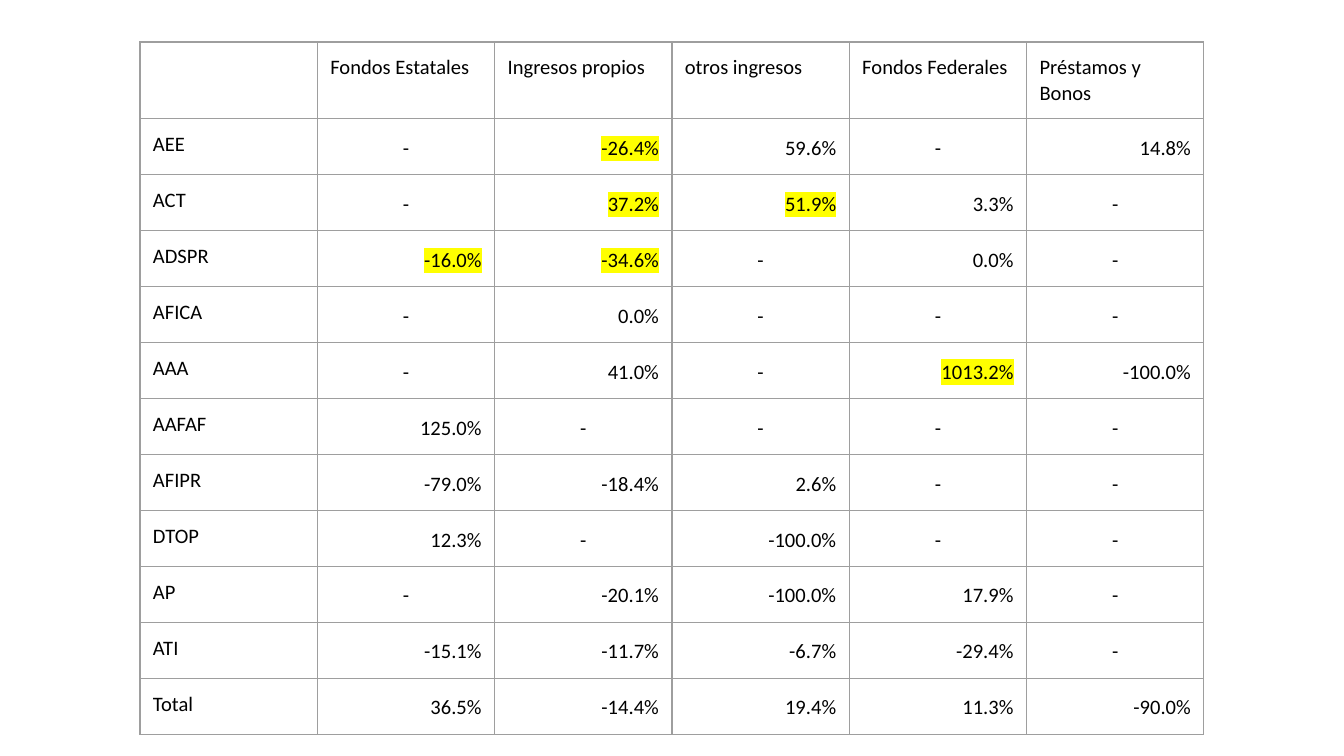
from dataclasses import dataclass

from lxml import etree
from pptx import Presentation
from pptx.dml.color import RGBColor
from pptx.enum.text import MSO_ANCHOR, PP_ALIGN
from pptx.oxml.ns import qn
from pptx.util import Pt

LEFT, CENTER, RIGHT = PP_ALIGN.LEFT, PP_ALIGN.CENTER, PP_ALIGN.RIGHT
TOP = MSO_ANCHOR.TOP
BLANK_LAYOUT = 6
PX_PER_INCH = 134.4
FONT = "Calibri"
COLORS = {"text": "000000", "border": "9E9E9E", "highlight": "FFFF00"}

PAGE_WIDTH, PAGE_HEIGHT = 1344, 756
TABLE_LEFT, TABLE_TOP, TABLE_WIDTH = 140, 42, 1064
ROW_HEIGHT = 56
CELL_INSET = 13


@dataclass(frozen=True)
class AgencyRow:
    agency: str
    changes: tuple[str, ...]
    highlighted: tuple[int, ...] = ()


HEADERS = (
    "", "Fondos Estatales", "Ingresos propios", "otros ingresos",
    "Fondos Federales", "Préstamos y Bonos",
)
AGENCIES = (
    AgencyRow("AEE", ("-", "-26.4%", "59.6%", "-", "14.8%"), (2,)),
    AgencyRow("ACT", ("-", "37.2%", "51.9%", "3.3%", "-"), (2, 3)),
    AgencyRow("ADSPR", ("-16.0%", "-34.6%", "-", "0.0%", "-"), (1, 2)),
    AgencyRow("AFICA", ("-", "0.0%", "-", "-", "-")),
    AgencyRow("AAA", ("-", "41.0%", "-", "1013.2%", "-100.0%"), (4,)),
    AgencyRow("AAFAF", ("125.0%", "-", "-", "-", "-")),
    AgencyRow("AFIPR", ("-79.0%", "-18.4%", "2.6%", "-", "-")),
    AgencyRow("DTOP", ("12.3%", "-", "-100.0%", "-", "-")),
    AgencyRow("AP", ("-", "-20.1%", "-100.0%", "17.9%", "-")),
    AgencyRow("ATI", ("-15.1%", "-11.7%", "-6.7%", "-29.4%", "-")),
    AgencyRow("Total", ("36.5%", "-14.4%", "19.4%", "11.3%", "-90.0%")),
)


def px(length: float) -> int:
    return round(length * 914400 / PX_PER_INCH)


def add_color(parent, tag: str, color: str):
    element = etree.SubElement(parent, qn(tag))
    etree.SubElement(element, qn("a:srgbClr"), val=COLORS[color])
    return element


def style_cell(cell) -> None:
    cell.fill.background()
    cell.vertical_anchor = TOP
    cell.margin_left = cell.margin_right = px(CELL_INSET)
    cell.margin_top = cell.margin_bottom = px(CELL_INSET)
    properties = cell._tc.get_or_add_tcPr()
    for position, side in enumerate(("a:lnL", "a:lnR", "a:lnT", "a:lnB")):
        line = etree.Element(qn(side), w=str(Pt(0.75)))
        add_color(line, "a:solidFill", "border")
        properties.insert(position, line)


def write_cell(cell, text: str, is_value: bool = False, highlighted: bool = False) -> None:
    style_cell(cell)
    if not text:
        return
    para = cell.text_frame.paragraphs[0]
    para.alignment = LEFT
    if is_value:
        para.alignment = CENTER if text == "-" else RIGHT
        para.line_spacing = 1.15
    span = para.add_run()
    span.text = text
    span.font.size = Pt(11)
    span.font.name = FONT
    span.font.color.rgb = RGBColor.from_string(COLORS["text"])
    if highlighted:
        properties = span.font._element
        marker = add_color(properties, "a:highlight", "highlight")
        properties.find(qn("a:solidFill")).addnext(marker)


def add_funds_table(page) -> None:
    row_count, column_count = len(AGENCIES) + 1, len(HEADERS)
    table = page.shapes.add_table(
        row_count, column_count, px(TABLE_LEFT), px(TABLE_TOP),
        px(TABLE_WIDTH), px(ROW_HEIGHT * row_count),
    ).table
    table.first_row = False
    table.horz_banding = False
    for column in table.columns:
        column.width = px(TABLE_WIDTH / column_count)
    for row in table.rows:
        row.height = px(ROW_HEIGHT)
    for column, header in enumerate(HEADERS):
        write_cell(table.cell(0, column), header)
    for row, agency in enumerate(AGENCIES, start=1):
        write_cell(table.cell(row, 0), agency.agency)
        for column, change in enumerate(agency.changes, start=1):
            write_cell(table.cell(row, column), change, True, column in agency.highlighted)


def main() -> None:
    deck = Presentation()
    deck.slide_width, deck.slide_height = px(PAGE_WIDTH), px(PAGE_HEIGHT)
    page = deck.slides.add_slide(deck.slide_layouts[BLANK_LAYOUT])
    add_funds_table(page)
    deck.save("out.pptx")


if __name__ == "__main__":
    main()
